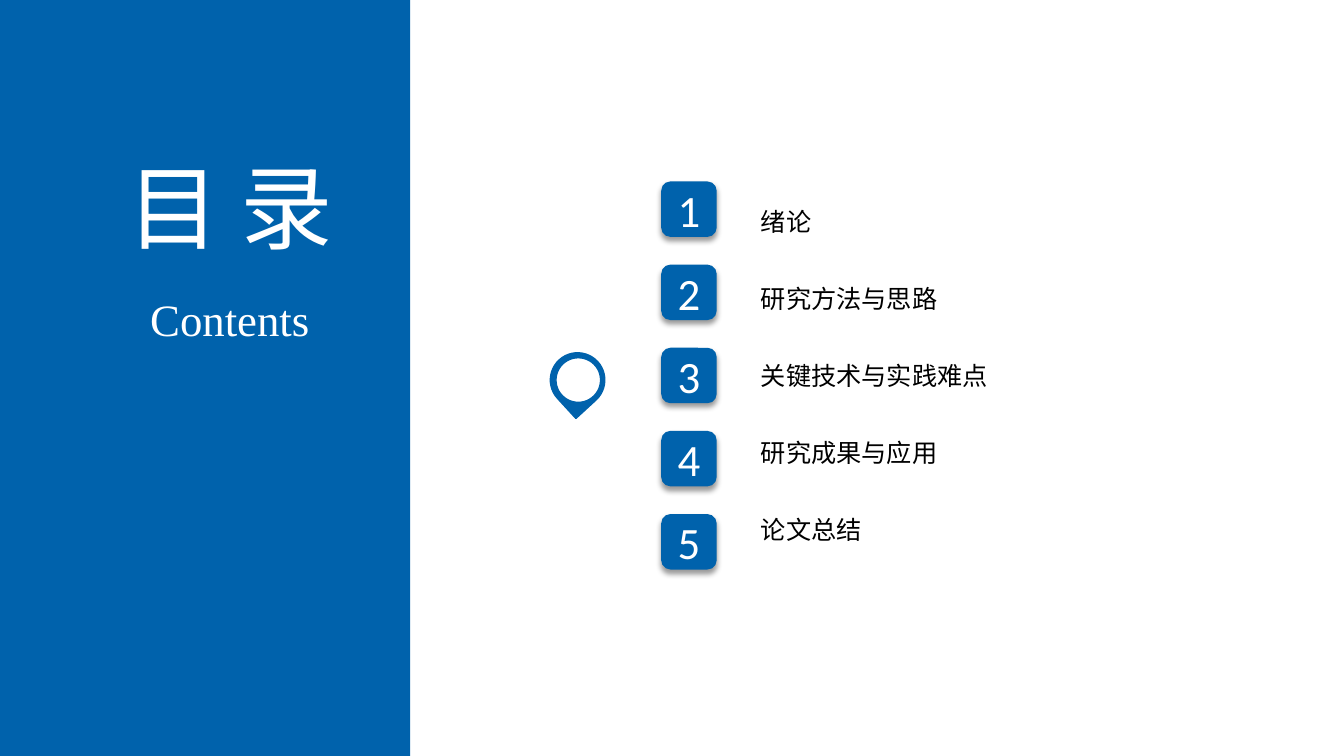
from dataclasses import dataclass

from lxml.etree import SubElement
from pptx import Presentation
from pptx.dml.color import RGBColor
from pptx.enum.shapes import MSO_SHAPE
from pptx.enum.text import MSO_ANCHOR, MSO_AUTO_SIZE, PP_ALIGN
from pptx.oxml.ns import qn
from pptx.util import Pt


@dataclass(frozen=True)
class Theme:
    blue: RGBColor = RGBColor(0x00, 0x62, 0xAC)
    white: RGBColor = RGBColor(0xFF, 0xFF, 0xFF)
    black: RGBColor = RGBColor(0x00, 0x00, 0x00)
    chinese: str = "Noto Sans CJK SC"
    digits: str = "Calibri"
    latin: str = "Times New Roman"
    title_size: int = 66
    heading_size: int = 32
    item_size: int = 18


@dataclass(frozen=True)
class Box:
    left: float
    top: float
    width: float
    height: float

    def lengths(self):
        return [Pt(value) for value in (self.left, self.top, self.width, self.height)]


THEME = Theme()
PAGE = Box(0, 0, 960, 540)
CHAPTERS = ["绪论", "研究方法与思路", "关键技术与实践难点", "研究成果与应用", "论文总结"]


def place(shape, box):
    shape.left, shape.top, shape.width, shape.height = box.lengths()


def write(shape, lines, font, size, color, align=PP_ALIGN.CENTER):
    """Fill a shape with one unwrapped, vertically centred paragraph per line."""
    frame = shape.text_frame
    frame.text = "\n".join(lines)
    frame.auto_size = MSO_AUTO_SIZE.NONE
    frame.word_wrap = False
    frame.vertical_anchor = MSO_ANCHOR.MIDDLE
    frame.margin_left = frame.margin_right = frame.margin_top = frame.margin_bottom = 0
    for para in frame.paragraphs:
        para.alignment = align
        para.space_before = para.space_after = Pt(0)
        for span in para.runs:
            span.font.name = font
            span.font.size = Pt(size)
            span.font.color.rgb = color
            SubElement(span.font._element, qn("a:ea"), typeface=font)


def add_solid(shapes, kind, box, fill, line=None):
    shape = shapes.add_shape(kind, *box.lengths())
    shape.shadow.inherit = False
    shape.fill.solid()
    shape.fill.fore_color.rgb = fill
    if line is None:
        shape.line.fill.background()
    else:
        shape.line.color.rgb = line
        shape.line.width = Pt(1)
    return shape


def add_drop_shadow(shape):
    effects = shape.element.spPr.find(qn("a:effectLst"))
    shadow = SubElement(effects, qn("a:outerShdw"), blurRad=str(Pt(4)), dist=str(Pt(3)),
                        dir=str(90 * 60000), algn="t", rotWithShape="0")
    color = SubElement(shadow, qn("a:srgbClr"), val=str(THEME.black))
    SubElement(color, qn("a:alpha"), val="40000")


def add_title_panel(page, box):
    panel = add_solid(page.shapes, MSO_SHAPE.RECTANGLE, box, THEME.blue)
    title = page.shapes.title
    title.element.addprevious(panel.element)  # keeps the panel behind the title
    place(title, Box(box.left + 73.5, box.top + 103, 181.5, 87))
    write(title, ["目 录"], THEME.chinese, THEME.title_size, THEME.white)
    subtitle = page.shapes.add_textbox(*Box(box.left + 99.5, box.top + 204.5, 129.5, 46).lengths())
    write(subtitle, ["Contents"], THEME.latin, THEME.heading_size, THEME.white)


def add_chapter_list(page, box, tile_size=39.6):
    """Spread numbered tiles evenly down the box and set the chapter names beside them."""
    pitch = (box.height - tile_size) / (len(CHAPTERS) - 1)
    for index in range(len(CHAPTERS)):
        tile_box = Box(box.left, box.top + index * pitch, tile_size, tile_size)
        tile = add_solid(page.shapes, MSO_SHAPE.ROUNDED_RECTANGLE, tile_box, THEME.blue)
        add_drop_shadow(tile)
        write(tile, [str(index + 1)], THEME.digits, THEME.heading_size, THEME.white)

    names = page.placeholders[1]
    indent = 71.2
    place(names, Box(box.left + indent, box.top, box.width - indent, box.height))
    write(names, CHAPTERS, THEME.chinese, THEME.item_size, THEME.black, PP_ALIGN.LEFT)
    line_height = THEME.item_size * 1.448
    for index, para in enumerate(names.text_frame.paragraphs):
        para.space_before = Pt(pitch - line_height if index else 0)
        properties = para._p.get_or_add_pPr()
        properties.set("marL", "0")
        properties.set("indent", "0")
        SubElement(properties, qn("a:buNone"))


def add_map_pin(page, box):
    """Draw a drop pointing down with a white disc in its middle."""
    pin = page.shapes.add_group_shape()
    drop = add_solid(pin.shapes, MSO_SHAPE.TEAR, box, THEME.blue, THEME.blue)
    drop.rotation = 137.5
    disc = box.width * 0.82
    inset = (box.width - disc) / 2
    disc_box = Box(box.left + inset + 0.5, box.top + inset, disc, disc)
    add_solid(pin.shapes, MSO_SHAPE.OVAL, disc_box, THEME.white, THEME.blue)


def main():
    deck = Presentation()
    deck.slide_width, deck.slide_height = Pt(PAGE.width), Pt(PAGE.height)
    page = deck.slides.add_slide(deck.slide_layouts[1])
    add_title_panel(page, Box(0, 0, 293, PAGE.height))
    add_chapter_list(page, Box(472.3, 129.6, 300, 277.2))
    add_map_pin(page, Box(393.1, 252, 38.9, 38.9))
    deck.save("out.pptx")


if __name__ == "__main__":
    main()
